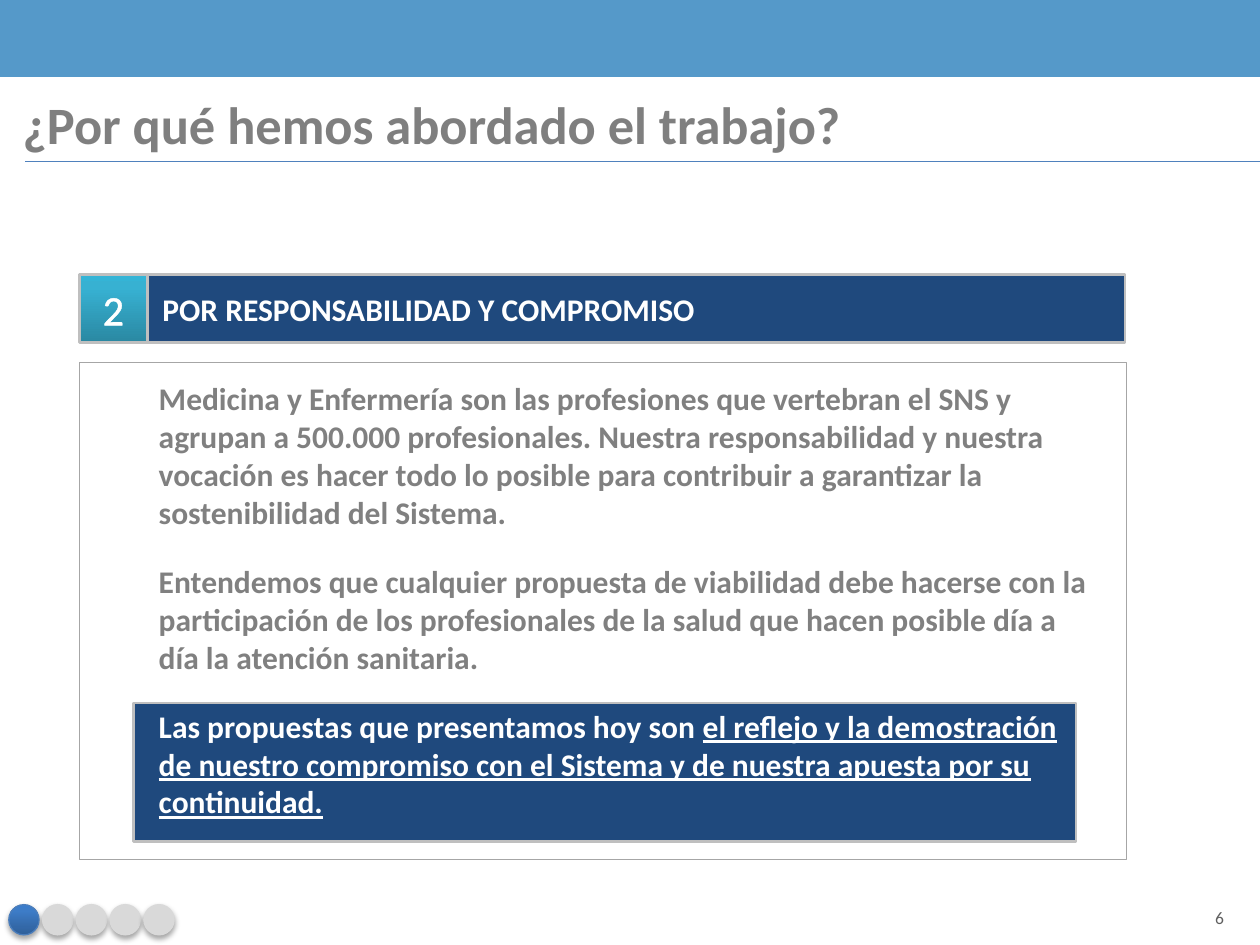
from lxml import etree
from pptx import Presentation, util as u
from pptx.dml import color as col
from pptx.enum import shapes as sh, text as tx
from pptx.oxml import ns

COLS, ROWS = 100, 75
CELL = u.Inches(10) // COLS
PAD = 1.2
NAVY, GRAY, WHITE, EDGE, PALE = "1F497D", "808080", "FFFFFF", "BFBFBF", "D9D9D9"
BODY = [
    [("Medicina y Enfermería son las profesiones que vertebran el SNS y agrupan a 500.000 "
      "profesionales. Nuestra responsabilidad y nuestra vocación es hacer todo lo posible "
      "para contribuir a garantizar la sostenibilidad del Sistema.", GRAY, False)],
    [("Entendemos que cualquier propuesta de viabilidad debe hacerse con la participación de "
      "los profesionales de la salud que hacen posible día a día la atención sanitaria.",
      GRAY, False)],
    [("Las propuestas que presentamos hoy son ", WHITE, False),
     ("el reflejo y la demostración de nuestro compromiso con el Sistema y de nuestra "
      "apuesta por su continuidad.", WHITE, True)],
]


def grid(*cells):
    """Turn grid cells into slide lengths."""
    return [round(c * CELL) for c in cells]


def paint(item, hue):
    """Give a fill or a font a solid colour."""
    if hasattr(item, "solid"):
        item.solid()
        item = item.fore_color
    else:
        item = item.color
    item.rgb = col.RGBColor.from_string(hue)


def node(up, tag, **keys):
    """Add a drawing element below another one."""
    return etree.SubElement(up, ns.qn("a:" + tag), {k: str(v) for k, v in keys.items()})


def shape(host, kind, at, fill=None, edge=None, width=0.75):
    """Add a flat preset shape."""
    form = host.add_shape(kind, *grid(*at))
    form.shadow.inherit = False
    if fill:
        paint(form.fill, fill)
    else:
        form.fill.background()
    if edge:
        paint(form.line.fill, edge)
        form.line.width = u.Pt(width)
    else:
        form.line.fill.background()
    return form


def blend(form, *hues):
    """Fill a shape with a gradient rising from its foot."""
    form.fill.background()
    props = form._element.spPr
    old = props.find(ns.qn("a:noFill"))
    grad = node(props, "gradFill", rotWithShape=1)
    stops = node(grad, "gsLst")
    for share, hue in zip((0, 80, 100), hues):
        node(node(stops, "gs", pos=share * 1000), "srgbClr", val=hue)
    node(grad, "lin", ang=270 * 60000, scaled=0)
    props.replace(old, grad)


def shade(form):
    """Drop a soft shadow below a shape."""
    list_ = form._element.spPr.find(ns.qn("a:effectLst"))
    drop = node(list_, "outerShdw", blurRad=u.Pt(3.1), dist=u.Pt(1.8),
                dir=90 * 60000, rotWithShape=0)
    node(node(drop, "srgbClr", val="000000"), "alpha", val=35000)


def write(form, paras, size, bold=True, mid=False, left=PAD):
    """Fill a frame with paragraphs of (words, colour, underline) runs."""
    frame = form.text_frame
    frame.word_wrap = True
    frame.margin_left, frame.margin_right = grid(left, PAD)
    frame.margin_top = frame.margin_bottom = grid(PAD)[0]
    frame.vertical_anchor = tx.MSO_ANCHOR.MIDDLE if mid else tx.MSO_ANCHOR.TOP
    for i, runs in enumerate(paras):
        para = frame.add_paragraph() if i else frame.paragraphs[0]
        para.alignment = tx.PP_ALIGN.CENTER if mid else tx.PP_ALIGN.LEFT
        para.space_before = u.Pt(12 if i else 0)
        para.space_after = u.Pt(6 if i < len(paras) - 1 else 0)
        para.font.name, para.font.size, para.font.bold = "Calibri", u.Pt(size), bold
        for words, hue, under in runs:
            run = para.add_run()
            run.text = words
            paint(run.font, hue)
            if under:
                run.font.underline = True


def label(host, at, paras, size, **style):
    """Add a text box with its words."""
    write(host.add_textbox(*grid(*at)), paras, size, **style)


def rule(host, ends, hue):
    """Draw a thin straight line."""
    line = host.add_connector(sh.MSO_CONNECTOR.STRAIGHT, *grid(*ends))
    paint(line.line.fill, hue)
    line.line.width = u.Pt(0.75)
    node(line._element.spPr, "effectLst")


def steps(host, count):
    """Draw the row of progress dots with the first one lit."""
    group = host.add_group_shape().shapes
    for i in range(count):
        dot = shape(group, sh.MSO_SHAPE.OVAL, (0.7 + 2.68 * i, 71.8, 2.4, 2.4),
                    PALE, PALE if i else "4B7EBC")
        shade(dot)
        if not i:
            blend(dot, "2F5F99", "3D7CC7", "3A7CCB")


def badge(host, at, words):
    """Draw the numbered square with outlined digits."""
    form = shape(host, sh.MSO_SHAPE.RECTANGLE, at, None, EDGE, 1.5)
    blend(form, "2A88A2", "37B1D2", "34B4D6")
    write(form, [[(words, WHITE, False)]], 24, bold=False, mid=True)
    props = form.text_frame.paragraphs[0].runs[0]._r.get_or_add_rPr()
    line = node(props, "ln", w=u.Pt(0.75))
    node(node(line, "solidFill"), "srgbClr", val=WHITE)
    props.insert(0, line)


def main():
    """Build and save the slide."""
    deck = Presentation()
    deck.slide_width, deck.slide_height = grid(COLS, ROWS)
    host = deck.slides.add_slide(deck.slide_layouts[6]).shapes
    rect = sh.MSO_SHAPE.RECTANGLE
    shape(host, rect, (0, 0, COLS, 6.1), "5599C9")
    label(host, (94.3, 71.2, 5, 3.3), [[("6", "5F5F5F", False)]], 10, bold=False, mid=True)
    head = shape(host, rect, (10.6, 21.8, 78.7, 5.4), NAVY, EDGE, 1.5)
    write(head, [[("POR RESPONSABILIDAD Y COMPROMISO", WHITE, False)]], 18, left=2.3)
    label(host, (0.6, 6.1, 98.8, 7.4),
          [[("¿Por qué hemos abordado el trabajo?", "7F7F7F", False)]], 30)
    steps(host, 5)
    rule(host, (2, 12.8, COLS, 12.8), "4F81BD")
    shape(host, rect, (6.3, 28.8, 83.1, 39.4), None, "A6A6A6")
    badge(host, (6.3, 21.8, 5.4, 5.4), "2")
    shape(host, rect, (10.6, 55.8, 74.8, 11), NAVY, EDGE, 1.5)
    label(host, (11.4, 28.9, 76.4, 37.7), BODY, 18)
    deck.save("out.pptx")


if __name__ == "__main__":
    main()
